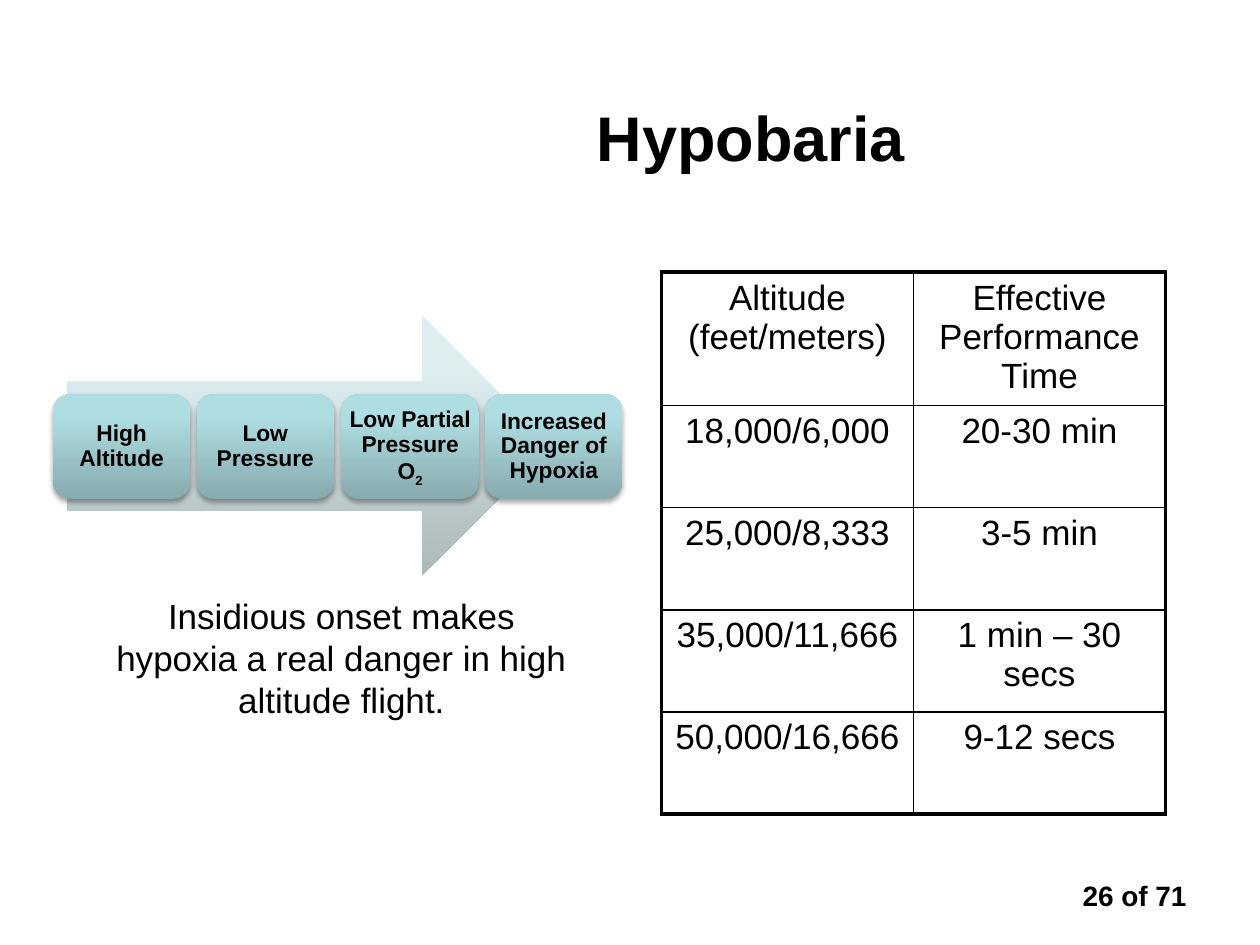
from dataclasses import dataclass

import lxml.etree
import pptx
import pptx.dml.color
import pptx.enum.shapes
import pptx.enum.text
import pptx.oxml
import pptx.oxml.ns
import pptx.util

RGBColor = pptx.dml.color.RGBColor
MSO_SHAPE = pptx.enum.shapes.MSO_SHAPE
ANCHOR = pptx.enum.text.MSO_ANCHOR
qn = pptx.oxml.ns.qn

PX = 9144  # EMU per px, 100 px to the inch
FONT = "Arial"
BLACK = RGBColor(0x00, 0x00, 0x00)
ARROW_STOPS = [
    (0, RGBColor(0xAB, 0xB7, 0xB8)),
    (80, RGBColor(0xDE, 0xED, 0xEF)),
    (100, RGBColor(0xDF, 0xEF, 0xF0)),
]
STEP_STOPS = [
    (0, RGBColor(0x87, 0xAB, 0xAE)),
    (80, RGBColor(0xAF, 0xDE, 0xE2)),
    (100, RGBColor(0xAF, 0xE0, 0xE4)),
]
THIN, THICK = 1, 2.25  # table rules in points


@dataclass(frozen=True)
class Box:
    x: int
    y: int
    w: int
    h: int

    def emu(self) -> tuple[int, ...]:
        return tuple(v * PX for v in (self.x, self.y, self.w, self.h))


@dataclass(frozen=True)
class Step:
    text: str
    subscript: str = ""


STEPS = [
    Step("High Altitude"),
    Step("Low Pressure"),
    Step("Low Partial Pressure O", "2"),
    Step("Increased Danger of Hypoxia"),
]
STEP_BOX = Box(42, 313, 109, 83)
STEP_PITCH = 114.4

TABLE_ROWS = [
    ("Altitude (feet/meters)", "Effective Performance Time"),
    ("18,000/6,000", "20-30 min"),
    ("25,000/8,333", "3-5 min"),
    ("35,000/11,666", "1 min – 30 secs"),
    ("50,000/16,666", "9-12 secs"),
]
TABLE_BOX = Box(525, 216, 400, 430)
HEADER_H, ROW_H = 106, 81


def add_run(p, text: str, size: int, bold: bool = False):
    p.alignment = pptx.enum.text.PP_ALIGN.CENTER
    r = p.add_run()
    r.text = text
    r.font.name = FONT
    r.font.size = pptx.util.Pt(size)
    r.font.bold = bold
    r.font.color.rgb = BLACK
    return r


def add_text(s, box: Box, text: str, size: int, bold: bool = False) -> None:
    tf = s.shapes.add_textbox(*box.emu()).text_frame
    tf.word_wrap = True
    add_run(tf.paragraphs[0], text, size, bold)


def add_gradient_shape(s, kind, box: Box, stops):
    """Add a shape whose gradient runs from bottom to top."""
    sp = s.shapes.add_shape(kind, *box.emu())
    sp.shadow.inherit = False
    sp.line.fill.background()
    sp.fill.gradient()
    grad = sp.fill._xPr.find(qn("a:gradFill"))
    gs_lst = grad.find(qn("a:gsLst"))
    for gs in list(gs_lst):
        gs_lst.remove(gs)
    for pos, color in stops:
        gs = lxml.etree.SubElement(gs_lst, qn("a:gs"), pos=str(pos * 1000))
        lxml.etree.SubElement(gs, qn("a:srgbClr"), val=str(color))
    lin = grad.find(qn("a:lin"))
    lin.set("ang", str(270 * 60000))
    lin.set("scaled", "0")
    return sp


def add_shadow(sp) -> None:
    effects = sp._element.spPr.find(qn("a:effectLst"))
    shadow = lxml.etree.SubElement(
        effects, qn("a:outerShdw"), blurRad=str(pptx.util.Pt(3.1)),
        dist=str(pptx.util.Pt(1.8)), dir=str(90 * 60000), rotWithShape="0")
    color = lxml.etree.SubElement(shadow, qn("a:srgbClr"), val=str(BLACK))
    lxml.etree.SubElement(color, qn("a:alpha"), val="35000")


def add_step(s, index: int, step: Step) -> None:
    x = STEP_BOX.x + round(index * STEP_PITCH)
    box = Box(x, STEP_BOX.y, STEP_BOX.w, STEP_BOX.h)
    sp = add_gradient_shape(s, MSO_SHAPE.ROUNDED_RECTANGLE, box, STEP_STOPS)
    add_shadow(sp)
    tf = sp.text_frame
    tf.word_wrap = True
    tf.vertical_anchor = ANCHOR.MIDDLE
    tf.margin_left = tf.margin_right = tf.margin_top = tf.margin_bottom = PX
    p = tf.paragraphs[0]
    p.line_spacing = 0.9
    add_run(p, step.text, 13, True)
    if step.subscript:
        r = add_run(p, step.subscript, 13, True)
        r.font._element.set("baseline", "-25000")


def set_borders(cell, widths: dict[str, float]) -> None:
    tc_pr = cell._tc.get_or_add_tcPr()
    for side, width in widths.items():
        ln = lxml.etree.SubElement(
            tc_pr, qn(f"a:ln{side}"), w=str(pptx.util.Pt(width)))
        fill = lxml.etree.SubElement(ln, qn("a:solidFill"))
        lxml.etree.SubElement(fill, qn("a:srgbClr"), val=str(BLACK))


def add_altitude_table(s) -> None:
    n_rows, n_cols = len(TABLE_ROWS), len(TABLE_ROWS[0])
    table = s.shapes.add_table(n_rows, n_cols, *TABLE_BOX.emu()).table
    table.first_row = table.horz_banding = False
    for col in table.columns:
        col.width = TABLE_BOX.w // n_cols * PX
    for i, texts in enumerate(TABLE_ROWS):
        table.rows[i].height = (ROW_H if i else HEADER_H) * PX
        for j, text in enumerate(texts):
            cell = table.cell(i, j)
            set_borders(cell, {
                "L": THICK if j == 0 else THIN,
                "R": THICK if j == n_cols - 1 else THIN,
                "T": THICK if i == 0 else THIN,
                "B": THICK if i == n_rows - 1 else THIN,
            })
            cell.fill.background()
            add_run(cell.text_frame.paragraphs[0], text, 20)


def main() -> None:
    prs = pptx.Presentation()
    prs.slide_width, prs.slide_height = 1000 * PX, 750 * PX
    s = prs.slides.add_slide(prs.slide_layouts[5])

    # Title
    title = s.shapes.title
    title.left, title.top, title.width, title.height = Box(250, 42, 692, 133).emu()
    title.text_frame.vertical_anchor = ANCHOR.MIDDLE
    add_run(title.text_frame.paragraphs[0], "Hypobaria", 36, True)

    # Altitude and performance time
    add_altitude_table(s)

    # Path to hypoxia
    add_gradient_shape(s, MSO_SHAPE.RIGHT_ARROW, Box(53, 251, 385, 206), ARROW_STOPS)
    for i, step in enumerate(STEPS):
        add_step(s, i, step)

    # Remark and page number
    add_text(s, Box(75, 467, 392, 140),
             "Insidious onset makes hypoxia a real danger in high altitude flight.", 20)
    add_text(s, Box(842, 692, 117, 34), "26 of 71", 16, True)

    prs.save("out.pptx")


if __name__ == "__main__":
    main()
